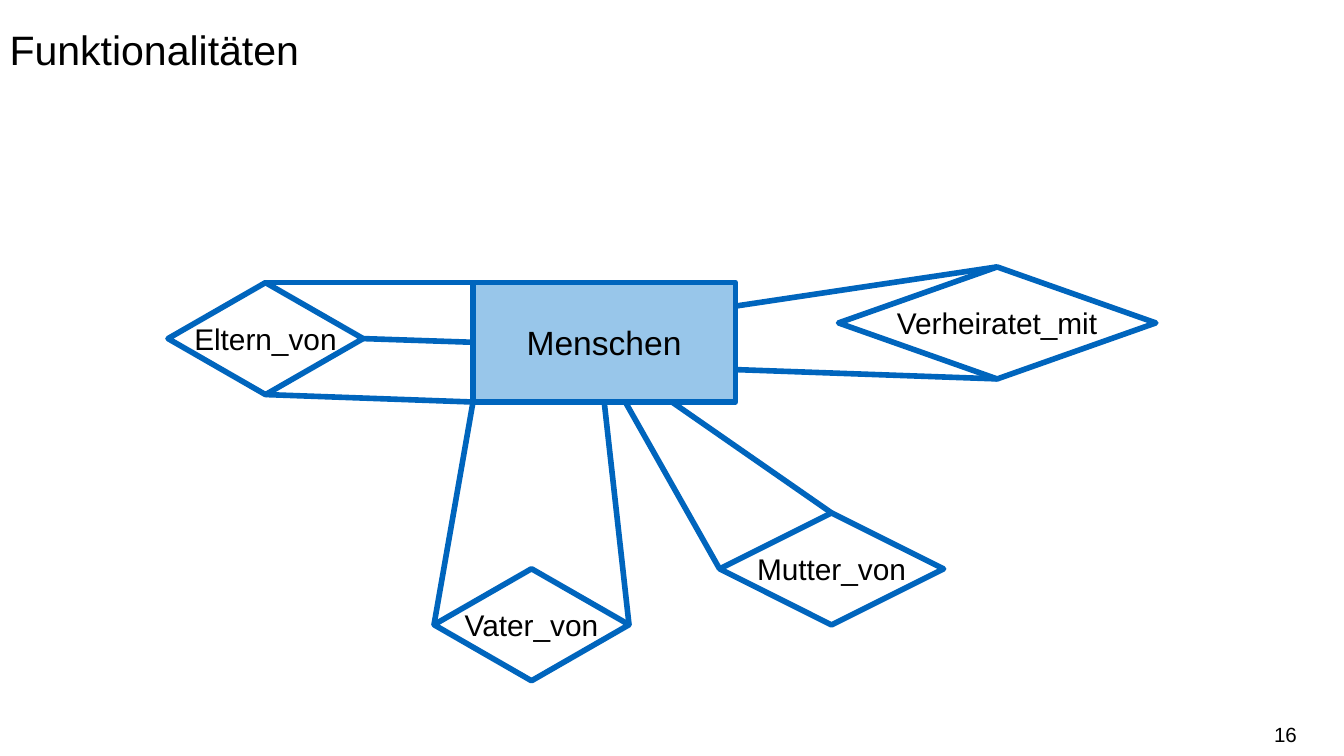
"""Build the slide on functionalities in an entity-relationship diagram."""
import pptx
import pptx.dml.color
import pptx.enum.shapes
import pptx.enum.text
import pptx.util
import lxml.etree

Pt = pptx.util.Pt
SHAPE = pptx.enum.shapes.MSO_SHAPE
ALIGN = pptx.enum.text.PP_ALIGN
ANCHOR = pptx.enum.text.MSO_ANCHOR
RGBColor = pptx.dml.color.RGBColor

BLACK = RGBColor(0x00, 0x00, 0x00)
WHITE = RGBColor(0xFF, 0xFF, 0xFF)
BLUE = RGBColor(0x00, 0x65, 0xBD)
LIGHT_BLUE = RGBColor(0x98, 0xC6, 0xEA)

WIDTH, HEIGHT = 720, 405
TITLE = "Funktionalitäten"
PAGE = "16"
ENTITY = ("Menschen", (253.4, 151.4, 140.6, 64))
DIAMOND_HEIGHT = 60
RELATIONSHIPS = {
    "Verheiratet_mit": (449.2, 143, 170),
    "Mutter_von": (385.5, 274.8, 120),
    "Vater_von": (232.5, 304.7, 104.5),
    "Eltern_von": (90, 151.4, 104.5),
}
# Each role joins a side of the entity, at a distance along it, to a corner.
ROLES = [
    ("Verheiratet_mit", "bottom", "right", 46.6),
    ("Verheiratet_mit", "top", "right", 12.6),
    ("Vater_von", "left", "bottom", 0),
    ("Vater_von", "right", "bottom", 70.3),
    ("Mutter_von", "left", "bottom", 81.6),
    ("Mutter_von", "top", "bottom", 106.6),
    ("Eltern_von", "top", "left", 0),
    ("Eltern_von", "right", "left", 32),
    ("Eltern_von", "bottom", "left", 64),
]


def write(shape, text, size, align, insets, **frame_format):
    frame = shape.text_frame
    left, top, right, bottom = map(Pt, insets)
    frame_format.update(margin_left=left, margin_top=top,
                        margin_right=right, margin_bottom=bottom)
    for key, value in frame_format.items():
        setattr(frame, key, value)
    paragraph = frame.paragraphs[0]
    paragraph.text = text
    paragraph.alignment = align
    for key, value in {"name": "Arial", "size": Pt(size)}.items():
        setattr(paragraph.font, key, value)
    paragraph.font.color.rgb = BLACK
    return paragraph


def outline(line):
    line.color.rgb = BLUE
    line.width = Pt(3)


def add_node(slide, kind, text, box, size, fill):
    node = slide.shapes.add_shape(kind, *map(Pt, box))
    node.shadow.inherit = False
    node.fill.solid()
    node.fill.fore_color.rgb = fill
    outline(node.line)
    write(node, text, size, ALIGN.CENTER, (5, 3, 5, 3),
          vertical_anchor=ANCHOR.MIDDLE, word_wrap=False)


def corner(box, side):
    left, top, width, height = box
    return {
        "left": (left, top + height / 2),
        "right": (left + width, top + height / 2),
        "top": (left + width / 2, top),
        "bottom": (left + width / 2, top + height),
    }[side]


def along(box, side, distance):
    left, top, width, height = box
    return {
        "left": (left, top + distance),
        "right": (left + width, top + distance),
        "bottom": (left + distance, top + height),
    }[side]


def add_role(slide, start, end):
    role = slide.shapes.add_connector(
        pptx.enum.shapes.MSO_CONNECTOR.STRAIGHT, *map(Pt, start + end))
    outline(role.line)
    properties = role.line._get_or_add_ln().getparent()
    lxml.etree.SubElement(properties, pptx.oxml.ns.qn("a:effectLst"))


def main():
    deck = pptx.Presentation()
    deck.slide_width, deck.slide_height = Pt(WIDTH), Pt(HEIGHT)
    slide = deck.slides.add_slide(deck.slide_layouts[6])

    title = slide.shapes.add_textbox(0, 0, Pt(WIDTH), Pt(67.5))
    heading = write(title, TITLE, 22, ALIGN.LEFT, (5.2, 6.5, 5.2, 0),
                    vertical_anchor=ANCHOR.TOP, word_wrap=True)
    heading.line_spacing = 1.25
    page = slide.shapes.add_textbox(*map(Pt, (533.5, 382.5, 161.3, 21.6)))
    write(page, PAGE, 11, ALIGN.RIGHT, (0, 3.6, 0, 3.6),
          vertical_anchor=ANCHOR.MIDDLE, word_wrap=True)

    diamonds = {name: (*place, DIAMOND_HEIGHT) for name, place in RELATIONSHIPS.items()}
    for name, box in diamonds.items():
        add_node(slide, SHAPE.DIAMOND, name, box, 16, WHITE)
    entity, entity_box = ENTITY
    add_node(slide, SHAPE.RECTANGLE, entity, entity_box, 18, LIGHT_BLUE)
    for name, tip, side, distance in ROLES:
        add_role(slide, along(entity_box, side, distance), corner(diamonds[name], tip))

    deck.save("out.pptx")


if __name__ == "__main__":
    main()
